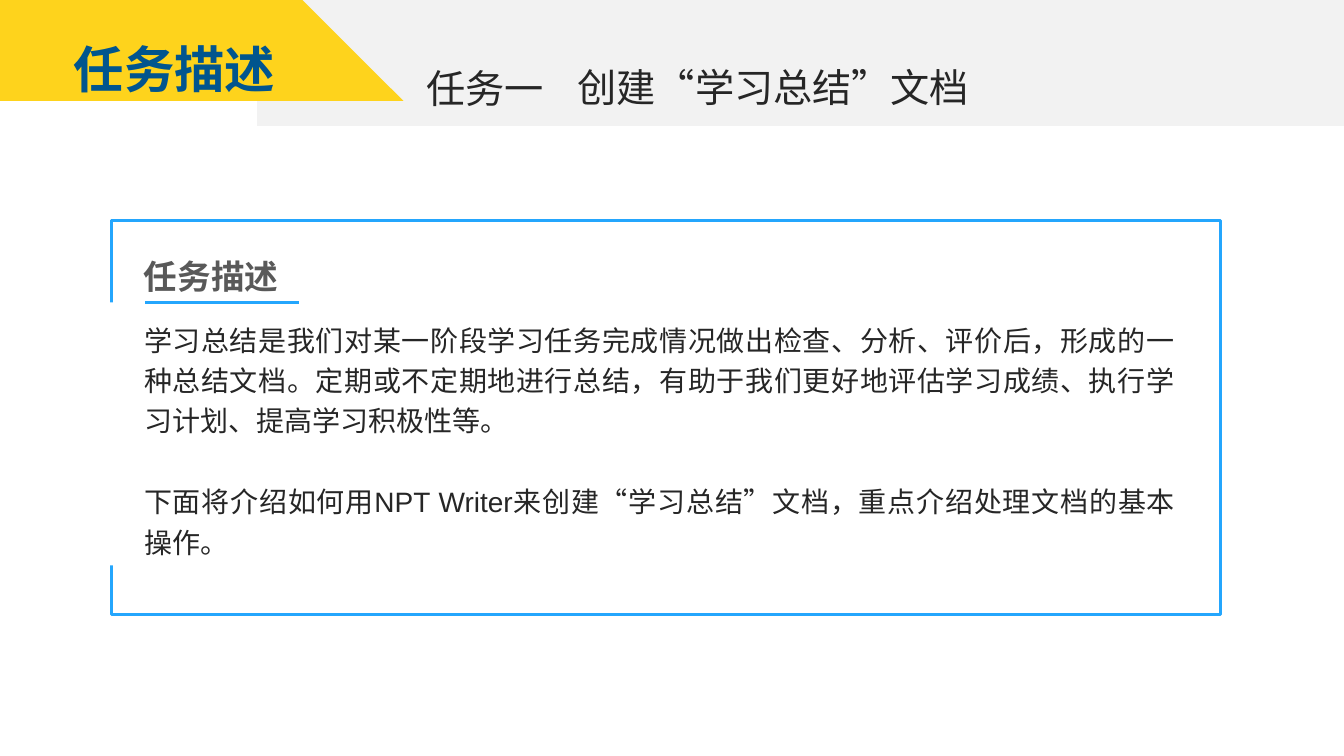
from lxml import etree
from pptx import Presentation
from pptx.dml.color import RGBColor
from pptx.enum import shapes, text
from pptx.oxml import ns
from pptx.util import Inches, Pt

# Colours and fonts
WHITE = RGBColor(0xFF, 0xFF, 0xFF)
BLUE = RGBColor(0x24, 0xA6, 0xFD)
NAVY = RGBColor(0x01, 0x55, 0x8E)
YELLOW = RGBColor(0xFE, 0xD3, 0x1C)
PALE = RGBColor(0xF2, 0xF2, 0xF2)
GREY = RGBColor(0x59, 0x59, 0x59)
DARK = RGBColor(0x26, 0x26, 0x26)
LATIN, CJK = "Arial", "Noto Sans CJK SC"

# Content
SECTION = "任务描述"
TASK = "任务一"
TITLE = "创建“学习总结”文档"
BODY = [
    "学习总结是我们对某一阶段学习任务完成情况做出检查、分析、评价后，形成的一种总结文档。"
    "定期或不定期地进行总结，有助于我们更好地评估学习成绩、执行学习计划、提高学习积极性等。",
    "下面将介绍如何用NPT Writer来创建“学习总结”文档，重点介绍处理文档的基本操作。",
]

# Layout
SLIDE_W, SLIDE_H = 13.33, 7.5
BANNER_H = 1.25
ARROW = [(0, 0), (3.12, 0), (3.93, 0.74), (3.36, BANNER_H), (0, BANNER_H)]
FRAME = (1.11, 2.19, 11, 3.91)
FRAME_GAP = (0.95, 3, 0.38, 2.61)
PARAGRAPH_GAP = 29


def paint(s, fill, line=None):
    s.shadow.inherit = False
    s.fill.solid()
    s.fill.fore_color.rgb = fill
    if line:
        s.line.color.rgb = line
        s.line.width = Pt(2)
    else:
        s.line.fill.background()


def add_rect(box, fill, line=None):
    s = slide.shapes.add_shape(shapes.MSO_SHAPE.RECTANGLE, *map(Inches, box))
    paint(s, fill, line)


def add_text(box, lines, size, color, bold=False, font=LATIN, align=None,
             spacing=None, wrap=True):
    tf = slide.shapes.add_textbox(*map(Inches, box)).text_frame
    tf.word_wrap = wrap
    tf.auto_size = text.MSO_AUTO_SIZE.SHAPE_TO_FIT_TEXT
    tf.text = "\n".join(lines)
    for i, p in enumerate(tf.paragraphs):
        p.alignment = align
        p.line_spacing = spacing
        if i:
            p.space_before = Pt(PARAGRAPH_GAP)
        for r in p.runs:
            r.font.size = Pt(size)
            r.font.bold = bold
            r.font.color.rgb = color
            r.font.name = font
            ea = etree.SubElement(r.font._element, ns.qn("a:ea"))
            ea.set("typeface", CJK)


prs = Presentation()
prs.slide_width, prs.slide_height = Inches(SLIDE_W), Inches(SLIDE_H)
slide = prs.slides.add_slide(prs.slide_layouts[6])

# Frame, open on its left side
add_rect(FRAME, WHITE, BLUE)
add_rect(FRAME_GAP, WHITE)

# Heading with underline, and body
underline = slide.shapes.add_connector(
    shapes.MSO_CONNECTOR.STRAIGHT, *map(Inches, (1.44, 3, 2.97, 3)))
underline.line.color.rgb = BLUE
underline.line.width = Pt(2)
etree.SubElement(underline._element.spPr, ns.qn("a:effectLst"))
JUSTIFY = text.PP_ALIGN.JUSTIFY
add_text((1.33, 3.09, 10.42, 2.52), BODY, 20, DARK, align=JUSTIFY, spacing=1.2)
add_text((1.33, 2.41, 3.07, 0.54), [SECTION], 24, GREY, bold=True,
         align=JUSTIFY, spacing=1.2)

# Banner
add_rect((2.55, 0, SLIDE_W - 2.55, BANNER_H), PALE)
fb = slide.shapes.build_freeform(0, 0, scale=Inches(1))
fb.add_line_segments(ARROW[1:], close=True)
paint(fb.convert_to_shape(), YELLOW)
add_text((0.62, 0.33, 2.22, 0.71), [SECTION], 36, NAVY, bold=True, font=CJK,
         align=text.PP_ALIGN.CENTER, wrap=False)
add_text((5.63, 0.58, 5.02, 0.57), [TITLE], 28, DARK)
add_text((4.13, 0.59, 1.49, 0.57), [TASK], 28, DARK)

prs.save("out.pptx")
